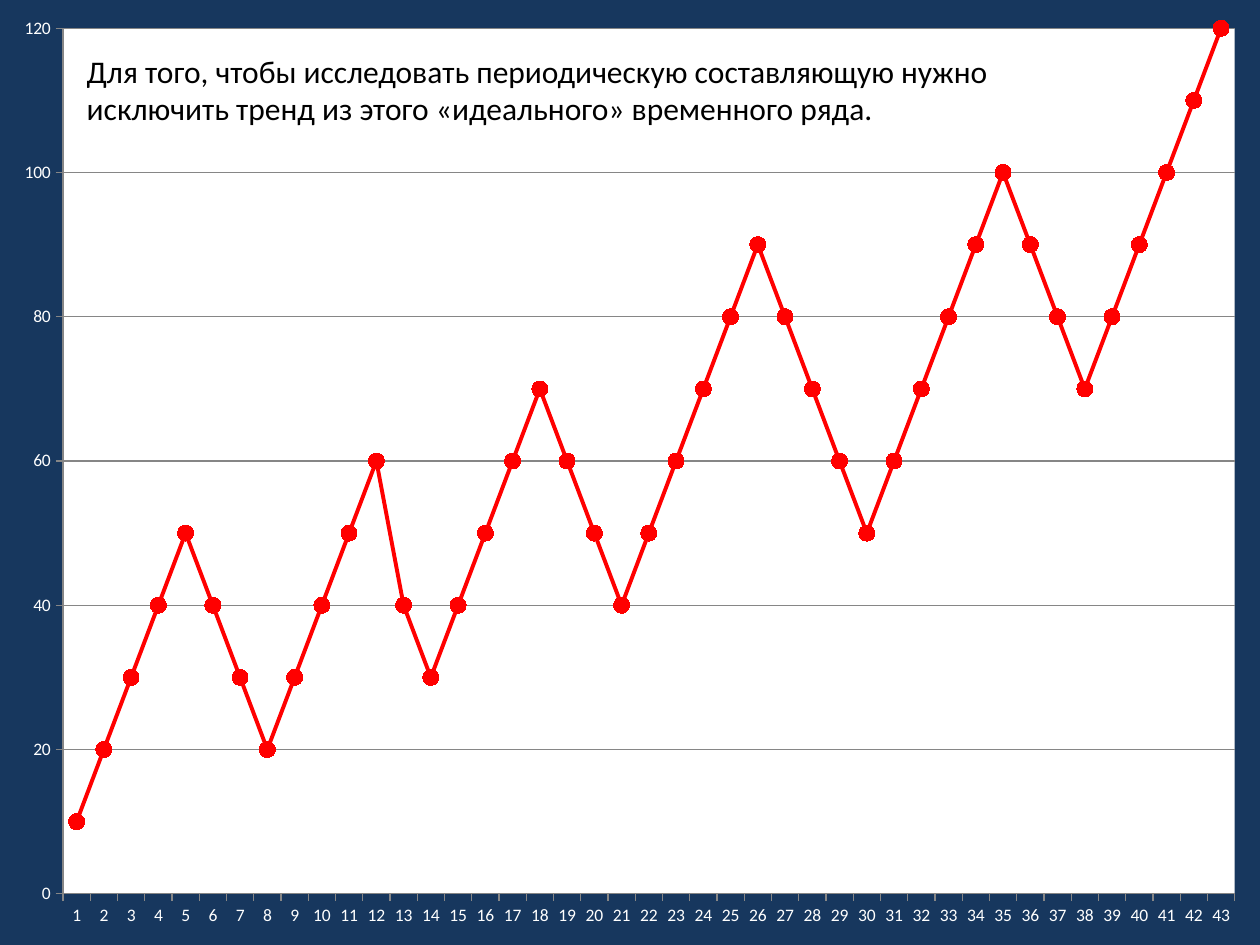
import pptx
import pptx.chart.data
import pptx.dml.color
import pptx.enum.chart
import pptx.enum.text
import pptx.oxml
import pptx.oxml.ns
import pptx.util

Pt = pptx.util.Pt
COLOURS = {"navy": "17375E", "white": "FFFFFF", "black": "000000",
           "red": "FF0000", "grey": "868686"}
SERIES_VALUES = [
    10, 20, 30, 40, 50, 40, 30, 20, 30, 40, 50, 60, 40, 30, 40,
    50, 60, 70, 60, 50, 40, 50, 60, 70, 80, 90, 80, 70, 60, 50,
    60, 70, 80, 90, 100, 90, 80, 70, 80, 90, 100, 110, 120]
MESSAGE = ("Для того, чтобы исследовать периодическую составляющую нужно "
           "исключить тренд из этого «идеального» временного ряда.")


class SlideBuilder:
    font_name = "Calibri"

    def __init__(self, slide):
        self.slide = slide

    def colour(self, name):
        return pptx.dml.color.RGBColor.from_string(COLOURS[name])

    def fill(self, target, name):
        target.fill.solid()
        target.fill.fore_color.rgb = self.colour(name)

    def line(self, target, name, width):
        target.line.color.rgb = self.colour(name)
        target.line.width = Pt(width)

    def font(self, font, name, size):
        font.name = self.font_name
        font.size = Pt(size)
        font.color.rgb = self.colour(name)

    def plot_area(self, chart, x, y, w, h):
        area = chart._chartSpace.chart.plotArea
        for old_layout in area.findall(pptx.oxml.ns.qn("c:layout")):
            area.remove(old_layout)
        namespaces = pptx.oxml.ns.nsdecls("c", "a")
        area.insert(0, pptx.oxml.parse_xml(
            f'<c:layout {namespaces}><c:manualLayout><c:layoutTarget val="inner"/>'
            '<c:xMode val="edge"/><c:yMode val="edge"/>'
            f'<c:x val="{x}"/><c:y val="{y}"/><c:w val="{w}"/><c:h val="{h}"/>'
            '</c:manualLayout></c:layout>'))
        area.append(pptx.oxml.parse_xml(
            f'<c:spPr {namespaces}><a:solidFill><a:srgbClr val="{COLOURS["white"]}"/>'
            '</a:solidFill></c:spPr>'))

    def line_chart(self, values, left, top, width, height):
        data = pptx.chart.data.CategoryChartData()
        data.categories = [str(number) for number in range(1, len(values) + 1)]
        data.add_series("Series 1", values)
        chart = self.slide.shapes.add_chart(
            pptx.enum.chart.XL_CHART_TYPE.LINE_MARKERS,
            Pt(left), Pt(top), Pt(width), Pt(height), data).chart
        chart.has_title = False
        chart.has_legend = False
        self.font(chart.font, "black", 10)
        self.plot_area(chart, 0.05, 0.03, 0.93, 0.916)

        for axis in (chart.category_axis, chart.value_axis):
            axis.major_tick_mark = pptx.enum.chart.XL_TICK_MARK.OUTSIDE
            self.font(axis.tick_labels.font, "white", 10)
            self.line(axis.format, "grey", 0.75)
        chart.value_axis.minimum_scale = 0
        chart.value_axis.maximum_scale = 120
        chart.value_axis.major_unit = 20
        chart.value_axis.has_major_gridlines = True
        self.line(chart.value_axis.major_gridlines.format, "grey", 0.75)

        chart.plots[0].vary_by_categories = False
        trend = chart.plots[0].series[0]
        trend.smooth = False
        self.line(trend.format, "red", 2.25)
        trend.marker.style = pptx.enum.chart.XL_MARKER_STYLE.CIRCLE
        trend.marker.size = 9
        self.fill(trend.marker.format, "red")
        self.line(trend.marker.format, "red", 0.75)

    def text(self, words, left, top, width, height, size):
        frame = self.slide.shapes.add_textbox(
            Pt(left), Pt(top), Pt(width), Pt(height)).text_frame
        frame.word_wrap = True
        frame.auto_size = pptx.enum.text.MSO_AUTO_SIZE.SHAPE_TO_FIT_TEXT
        frame.text = words
        for run in frame.paragraphs[0].runs:
            self.font(run.font, "black", size)


def main():
    presentation = pptx.Presentation()
    presentation.slide_width = Pt(720)
    presentation.slide_height = Pt(540)
    builder = SlideBuilder(presentation.slides.add_slide(presentation.slide_layouts[6]))
    builder.fill(builder.slide.background, "navy")
    builder.line_chart(SERIES_VALUES, 0, 0, 720, 540)
    builder.text(MESSAGE, 42.5, 26, 590, 51, 18)
    presentation.save("out.pptx")


if __name__ == "__main__":
    main()
